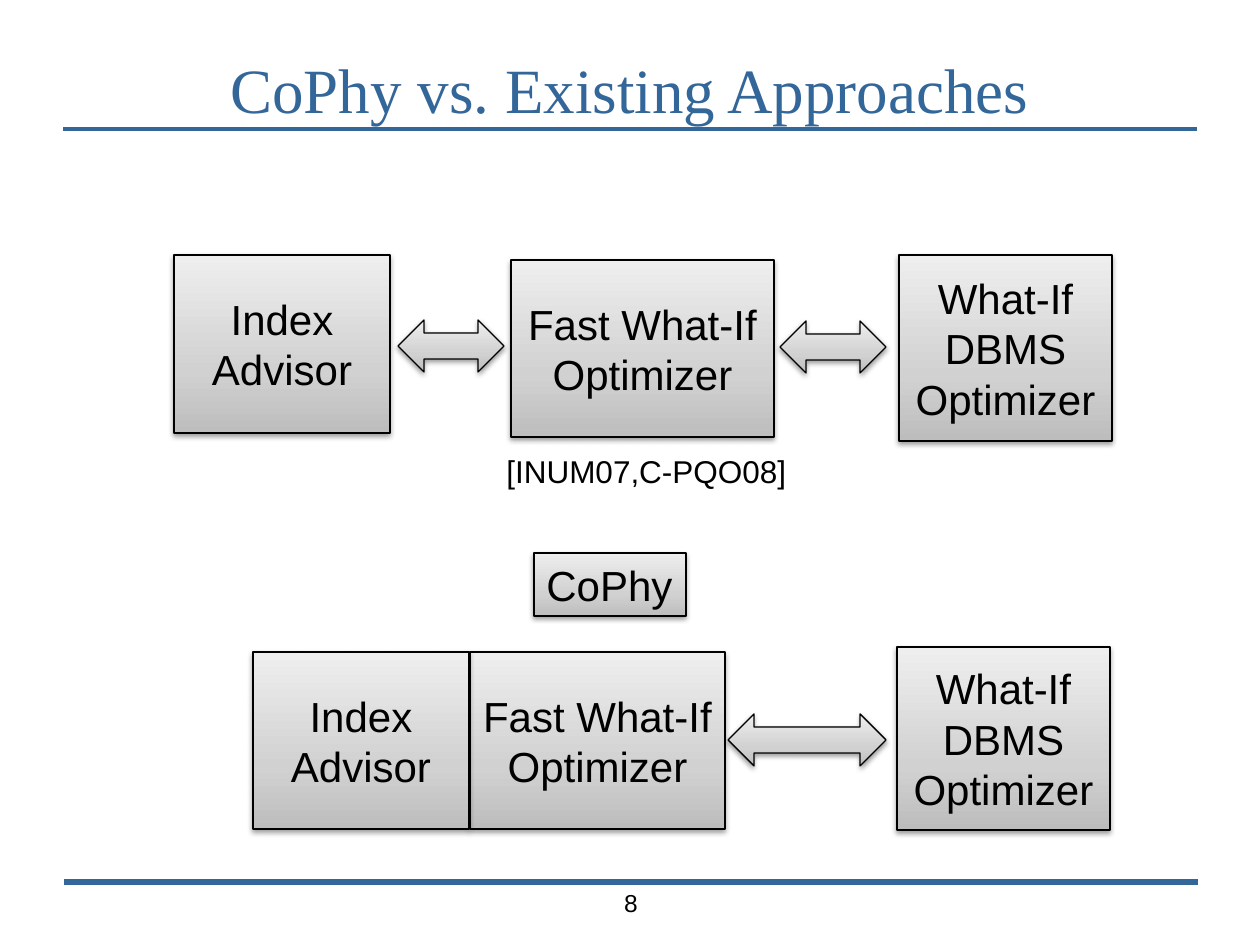
from lxml import etree
from pptx import Presentation
from pptx.dml.color import RGBColor
from pptx.enum.shapes import MSO_CONNECTOR, MSO_SHAPE
from pptx.enum.text import MSO_ANCHOR, MSO_AUTO_SIZE, PP_ALIGN
from pptx.oxml import parse_xml
from pptx.oxml.ns import qn
from pptx.util import Emu, Pt

PX = 914400 / 126
COLORS = {"blue": "336699", "black": "000000", "dark": "BDBDBD", "mid": "D1D1D1", "light": "EEEEEE"}
NS = 'xmlns:a="http://schemas.openxmlformats.org/drawingml/2006/main"'
GRADIENT = (
    f'<a:gradFill {NS} rotWithShape="1"><a:gsLst>'
    + "".join(
        f'<a:gs pos="{pos}"><a:srgbClr val="{COLORS[name]}"/></a:gs>'
        for pos, name in [(0, "dark"), (35000, "mid"), (100000, "light")]
    )
    + '</a:gsLst><a:lin ang="16200000" scaled="0"/></a:gradFill>'
)
SHADOW = (
    f'<a:outerShdw {NS} blurRad="39370" dist="20320" dir="5400000" rotWithShape="0">'
    f'<a:srgbClr val="{COLORS["black"]}"><a:alpha val="38000"/></a:srgbClr></a:outerShdw>'
)


def write(sp, text, size, font="Arial", color="black", align=PP_ALIGN.CENTER,
          anchor=MSO_ANCHOR.MIDDLE, wrap=True):
    tf = sp.text_frame
    tf.word_wrap = wrap
    tf.auto_size = MSO_AUTO_SIZE.NONE if wrap else MSO_AUTO_SIZE.SHAPE_TO_FIT_TEXT
    tf.vertical_anchor = anchor
    p = tf.paragraphs[0]
    p.text = text
    p.alignment = align
    p.font.name = font
    p.font.size = Pt(size)
    p.font.color.rgb = RGBColor.from_string(COLORS[color])
    return tf


def add_block(kind, *box):
    sp = s.shapes.add_shape(kind, *[Emu(round(v * PX)) for v in box])
    sp.line.color.rgb = RGBColor.from_string(COLORS["black"])
    sp.line.width = Pt(0.75)
    sp.shadow.inherit = False
    spPr = sp._element.spPr
    spPr.find(qn("a:prstGeom")).addnext(parse_xml(GRADIENT))
    spPr.find(qn("a:effectLst")).append(parse_xml(SHADOW))
    return sp


prs = Presentation()
prs.slide_width = Emu(round(1260 * PX))
prs.slide_height = Emu(round(945 * PX))
s = prs.slides.add_slide(prs.slide_layouts[6])

for x, y, width in [(63, 129, 2), (64, 882, 3.5)]:
    ends = [Emu(round(v * PX)) for v in (x, y, x + 1134, y)]
    rule = s.shapes.add_connector(MSO_CONNECTOR.STRAIGHT, *ends)
    rule.line.color.rgb = RGBColor.from_string(COLORS["blue"])
    rule.line.width = Pt(width)
    etree.SubElement(rule._element.spPr, qn("a:effectLst"))

title = s.shapes.add_textbox(*[Emu(round(v * PX)) for v in (94, 41, 1071, 95)])
write(title, "CoPhy vs. Existing Approaches", 36, "Times New Roman", "blue")

for text, *box in [
    ("Index Advisor", 174, 255, 216, 178),
    ("What-If DBMS Optimizer", 899, 255, 213, 186),
    ("Fast What-If Optimizer", 511, 260, 263, 177),
    ("What-If DBMS Optimizer", 897, 647, 213, 183),
    ("Fast What-If Optimizer", 470, 652, 255, 177),
    ("Index Advisor", 253, 652, 216, 177),
]:
    write(add_block(MSO_SHAPE.RECTANGLE, *box), text, 24)

for x, y, w in [(398, 320, 106), (780, 321, 106), (728, 714, 158)]:
    add_block(MSO_SHAPE.LEFT_RIGHT_ARROW, x, y, w, 52)

cophy = add_block(MSO_SHAPE.RECTANGLE, 534, 553, 152, 63)
write(cophy, "CoPhy", 24, align=PP_ALIGN.LEFT, anchor=MSO_ANCHOR.TOP, wrap=False)

citation = s.shapes.add_textbox(*[Emu(round(v * PX)) for v in (494, 446, 309, 50)])
write(citation, "[INUM07,C-PQO08]", 18, align=PP_ALIGN.LEFT, anchor=MSO_ANCHOR.TOP, wrap=False)

number = s.shapes.add_textbox(*[Emu(round(v * PX)) for v in (508, 881, 246, 37)])
tf = write(number, "8", 14, anchor=MSO_ANCHOR.TOP)
tf.margin_left = tf.margin_right = Emu(round(14 * PX))
tf.margin_top = tf.margin_bottom = Emu(round(7 * PX))

prs.save("out.pptx")
